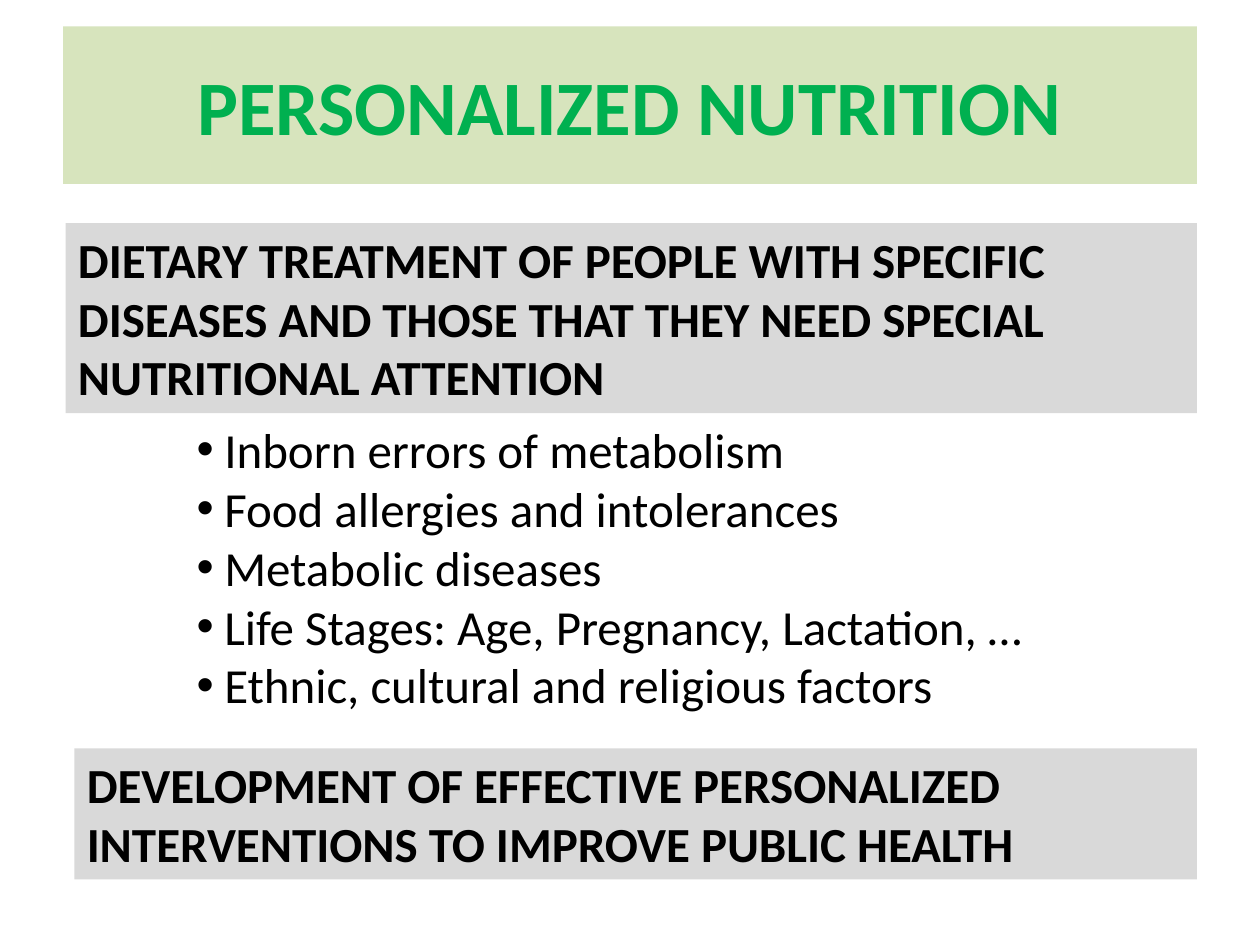
import pptx
import pptx.dml.color
import pptx.enum.text
import pptx.util

deck = pptx.Presentation()
deck.slide_width = pptx.util.Inches(10)
deck.slide_height = pptx.util.Inches(7.5)
COLUMN = deck.slide_width / 100
ROW = deck.slide_height / 75

FRAME = {"word_wrap": True, "auto_size": pptx.enum.text.MSO_AUTO_SIZE.NONE}
HEADING = {"name": "Calibri", "size": pptx.util.Pt(44), "bold": True}
STATEMENT = {"name": "Calibri", "size": pptx.util.Pt(28), "bold": True}
LIST = {"name": "Calibri", "size": pptx.util.Pt(28), "bold": False}


def color(target, value):
    target.rgb = pptx.dml.color.RGBColor.from_string(value)


def write(block, area, lines, font_format, ink, backdrop=None):
    """Place a block on the grid (column, row, columns, rows) and fill in its lines."""
    units = (COLUMN, ROW, COLUMN, ROW)
    for side, count, unit in zip(("left", "top", "width", "height"), area, units):
        setattr(block, side, round(count * unit))
    if backdrop:
        block.fill.solid()
        color(block.fill.fore_color, backdrop)
    for name, value in FRAME.items():
        setattr(block.text_frame, name, value)
    block.text_frame.text = "\n".join(lines)
    for paragraph in block.text_frame.paragraphs:
        paragraph.space_before = pptx.util.Pt(0)
        for name, value in font_format.items():
            setattr(paragraph.runs[0].font, name, value)
        color(paragraph.runs[0].font.color, ink)


slide = deck.slides.add_slide(deck.slide_layouts[1])
write(slide.shapes.title, (5, 2.1, 90, 12.5), ["PERSONALIZED NUTRITION"],
      HEADING, "00B050", "D7E4BD")

statements = [
    ((5.2, 17.7, 89.8, 15.1),
     ["DIETARY TREATMENT OF PEOPLE WITH SPECIFIC DISEASES AND THOSE "
      "THAT THEY NEED SPECIAL NUTRITIONAL ATTENTION"]),
    ((5.9, 59.4, 89.1, 10.4),
     ["DEVELOPMENT OF EFFECTIVE PERSONALIZED",
      "INTERVENTIONS TO IMPROVE PUBLIC HEALTH"]),
]
for area, lines in statements:
    write(slide.shapes.add_textbox(0, 0, 0, 0), area, lines, STATEMENT, "000000", "D9D9D9")

target_groups = slide.placeholders[1]
write(target_groups, (14.6, 32.8, 68.3, 24.6), [
    "Inborn errors of metabolism",
    "Food allergies and intolerances",
    "Metabolic diseases",
    "Life Stages: Age, Pregnancy, Lactation, …",
    "Ethnic, cultural and religious factors",
], LIST, "000000")
hanging = round(2.2 * COLUMN)
for group in target_groups.text_frame.paragraphs:
    properties = group._p.get_or_add_pPr()
    properties.set("marL", str(hanging))
    properties.set("indent", str(-hanging))

deck.save("out.pptx")
